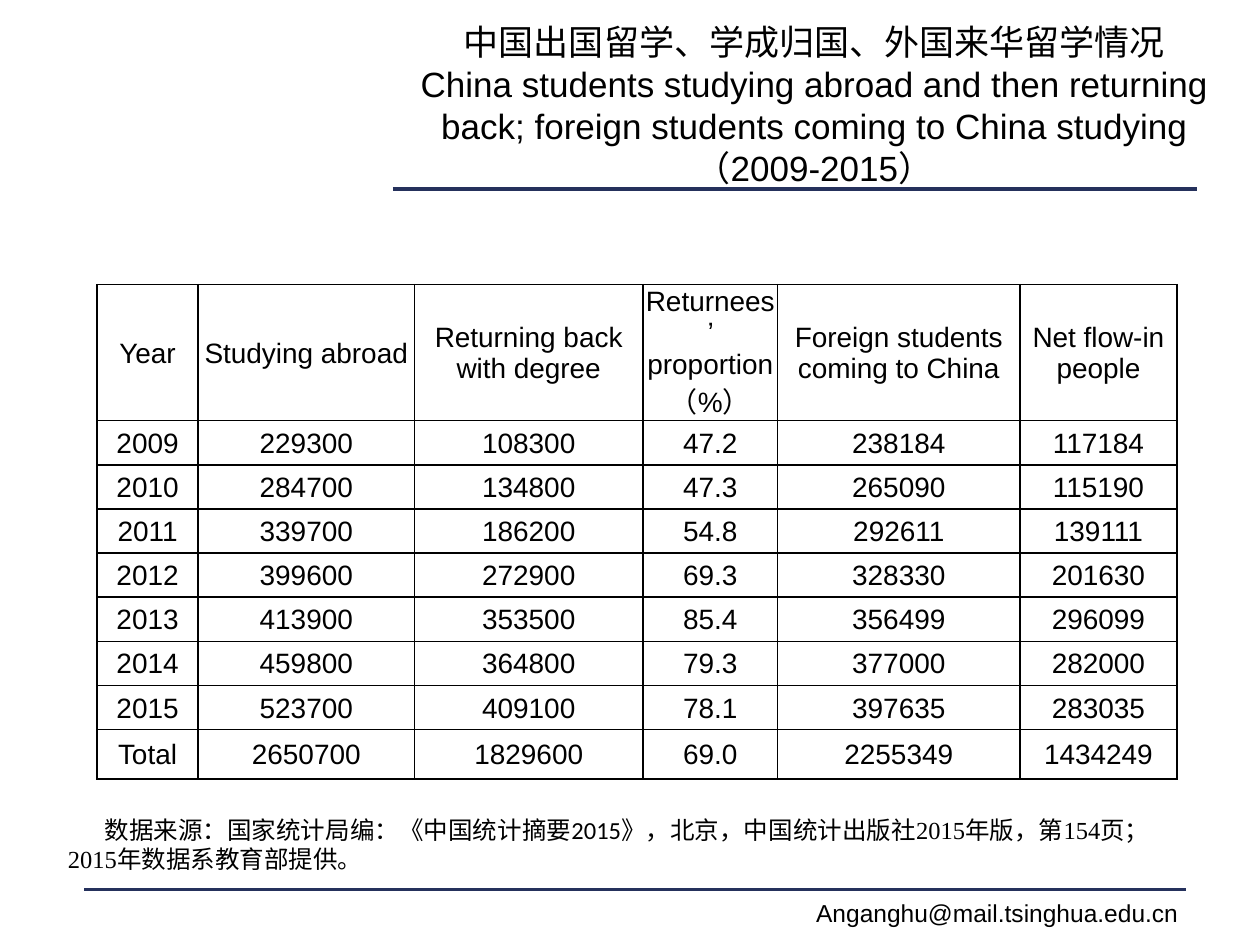
from lxml.etree import SubElement
from pptx import Presentation
from pptx.dml.color import RGBColor
from pptx.enum.shapes import MSO_CONNECTOR
from pptx.enum.text import MSO_ANCHOR, MSO_AUTO_SIZE, PP_ALIGN
from pptx.oxml.ns import qn
from pptx.util import Cm, Pt

BLACK = RGBColor(0x00, 0x00, 0x00)
NAVY = RGBColor(0x25, 0x31, 0x5C)
SANS, BODY, SERIF, CJK = "Arial", "Calibri", "Times New Roman", "Noto Sans CJK SC"

TITLE_LINES = [
    ("中国出国留学、学成归国、外国来华留学情况", CJK),
    ("China students studying abroad and then returning back; "
     "foreign students coming to China studying", SANS),
    ("（2009-2015）", SANS),
]
SOURCE_RUNS = [
    ("数据来源：国家统计局编：《中国统计", BODY),
    ("摘要", SERIF),
    ("2015》", BODY),
    ("，北京，中国统计出版社2015年版，第154页；2015年数据系教育部提供。", SERIF),
]
STUDENT_ROWS = [
    ["Year", "Studying abroad", "Returning back with degree",
     "Returnees’ proportion（%）", "Foreign students coming to China",
     "Net flow-in people"],
    ["2009", "229300", "108300", "47.2", "238184", "117184"],
    ["2010", "284700", "134800", "47.3", "265090", "115190"],
    ["2011", "339700", "186200", "54.8", "292611", "139111"],
    ["2012", "399600", "272900", "69.3", "328330", "201630"],
    ["2013", "413900", "353500", "85.4", "356499", "296099"],
    ["2014", "459800", "364800", "79.3", "377000", "282000"],
    ["2015", "523700", "409100", "78.1", "397635", "283035"],
    ["Total", "2650700", "1829600", "69.0", "2255349", "1434249"],
]
COLUMN_WIDTHS = [2.03, 4.37, 4.6, 2.72, 4.88, 3.17]
ROW_HEIGHTS = [2.41] + [0.89] * 7 + [0.99]


def apply_format(target, values):
    for name, value in values.items():
        setattr(target, name, value)


def add_run(paragraph, text, font_name, size):
    run = paragraph.add_run()
    run.text = text
    apply_format(run.font, {"name": font_name, "size": Pt(size)})
    run.font.color.rgb = BLACK
    # East Asian glyphs take their own typeface
    SubElement(run.font._element, qn("a:ea"), typeface=CJK)


def add_text_box(slide, box, frame_format):
    frame = slide.shapes.add_textbox(*map(Cm, box)).text_frame
    apply_format(frame, {"word_wrap": True, **frame_format})
    return frame.paragraphs[0]


def add_rule(slide, left, top, width):
    line = slide.shapes.add_connector(
        MSO_CONNECTOR.STRAIGHT, Cm(left), Cm(top), Cm(left + width), Cm(top))
    line.line.color.rgb = NAVY
    line.line.width = Pt(2)
    SubElement(line._element.spPr, qn("a:effectLst"))


def add_title(slide, box):
    left, top, width, height = box
    add_rule(slide, left + 0.48, top + height, 16.21)
    paragraph = add_text_box(slide, box, {
        "vertical_anchor": MSO_ANCHOR.BOTTOM, "margin_bottom": 0})
    apply_format(paragraph, {"alignment": PP_ALIGN.CENTER, "line_spacing": Pt(24)})
    for index, (text, font_name) in enumerate(TITLE_LINES):
        if index:
            paragraph.add_line_break()
        add_run(paragraph, text, font_name, 20)


def add_borders(cell):
    properties = cell._tc.get_or_add_tcPr()
    for position, side in enumerate(("a:lnL", "a:lnR", "a:lnT", "a:lnB")):
        border = SubElement(properties, qn(side), w=str(Pt(1)))
        fill = SubElement(border, qn("a:solidFill"))
        SubElement(fill, qn("a:srgbClr"), val=str(BLACK))
        properties.insert(position, border)


def add_student_table(slide, left, top):
    table = slide.shapes.add_table(
        len(ROW_HEIGHTS), len(COLUMN_WIDTHS), Cm(left), Cm(top),
        Cm(sum(COLUMN_WIDTHS)), Cm(sum(ROW_HEIGHTS))).table
    apply_format(table, {"first_row": False, "horz_banding": False})
    for column, width in zip(table.columns, COLUMN_WIDTHS):
        column.width = Cm(width)
    for row, height, texts in zip(table.rows, ROW_HEIGHTS, STUDENT_ROWS):
        row.height = Cm(height)
        for cell, text in zip(row.cells, texts):
            apply_format(cell, {
                "margin_left": Cm(0.03), "margin_right": Cm(0.03),
                "margin_top": Cm(0.03), "margin_bottom": 0,
                "vertical_anchor": MSO_ANCHOR.MIDDLE})
            cell.fill.background()
            add_borders(cell)
            paragraph = cell.text_frame.paragraphs[0]
            paragraph.alignment = PP_ALIGN.CENTER
            add_run(paragraph, text, SANS, 16)


def add_source_note(slide, box):
    paragraph = add_text_box(slide, box, {
        "auto_size": MSO_AUTO_SIZE.SHAPE_TO_FIT_TEXT})
    paragraph.line_spacing = Pt(16.5)
    paragraph._p.get_or_add_pPr().set("indent", str(Cm(0.74)))
    for text, font_name in SOURCE_RUNS:
        add_run(paragraph, text, font_name, 14)


def add_footer(slide, left, top, width):
    add_rule(slide, left, top, width)
    paragraph = add_text_box(
        slide, (left + 14.38, top + 0.05, 8.05, 0.64), {})
    paragraph.alignment = PP_ALIGN.CENTER
    add_run(paragraph, "Anganghu@mail.tsinghua.edu.cn", SANS, 14)


def main():
    presentation = Presentation()
    apply_format(presentation, {"slide_width": Cm(25.4), "slide_height": Cm(19.05)})
    slide = presentation.slides.add_slide(presentation.slide_layouts[6])
    add_footer(slide, 1.7, 17.93, 22.2)
    add_title(slide, (7.44, 2.11, 17.96, 1.7))
    add_source_note(slide, (1.12, 16.31, 22.86, 1.45))
    add_student_table(slide, 1.96, 5.74)
    presentation.save("out.pptx")


if __name__ == "__main__":
    main()
